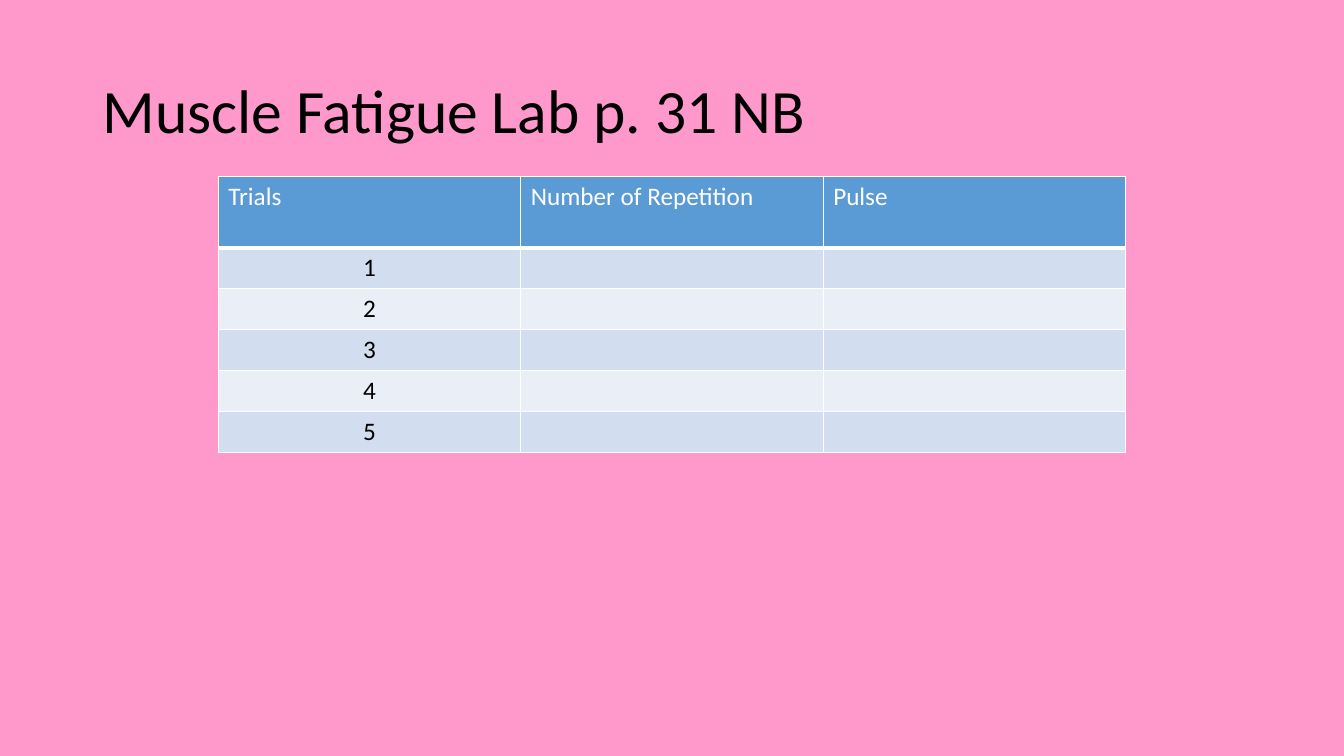
"""Build the muscle fatigue lab slide with its table of trials."""
from dataclasses import dataclass

from lxml.etree import SubElement
from pptx import Presentation
from pptx.dml.color import RGBColor
from pptx.enum.text import MSO_ANCHOR, MSO_AUTO_SIZE, PP_ALIGN
from pptx.oxml.ns import qn
from pptx.util import Pt


@dataclass(frozen=True)
class Theme:
    font: str = "Calibri"
    title_size: int = 44
    table_size: int = 18
    background: str = "FF99CC"
    ink: str = "000000"
    white: str = "FFFFFF"
    header: str = "5B9BD5"
    bands: tuple = ("D2DEEF", "EAEFF7")
    border: float = 1
    header_border: float = 3


class LabSlide:
    def __init__(self, deck, theme):
        self.theme = theme
        self.page = deck.slides.add_slide(deck.slide_layouts[5])
        self.paint(self.page.background.fill, theme.background)

    def paint(self, fill, color):
        fill.solid()
        fill.fore_color.rgb = RGBColor.from_string(color)

    def style_text(self, para, size, color, align):
        para.alignment = align
        for span in para.runs:
            span.font.name = self.theme.font
            span.font.size = Pt(size)
            span.font.bold = False
            span.font.color.rgb = RGBColor.from_string(color)

    def title(self, text, left, top, width, height):
        box = self.page.shapes.title
        box.left, box.top, box.width, box.height = Pt(left), Pt(top), Pt(width), Pt(height)
        frame = box.text_frame
        frame.text = text
        frame.word_wrap = True
        frame.auto_size = MSO_AUTO_SIZE.NONE
        frame.vertical_anchor = MSO_ANCHOR.MIDDLE
        para = frame.paragraphs[0]
        para.line_spacing = 0.9
        self.style_text(para, self.theme.title_size, self.theme.ink, PP_ALIGN.LEFT)

    def borders(self, cell, top, bottom):
        properties = cell._tc.get_or_add_tcPr()
        widths = {"L": self.theme.border, "R": self.theme.border, "T": top, "B": bottom}
        for side, width in widths.items():
            line = SubElement(properties, qn(f"a:ln{side}"), w=str(Pt(width)))
            fill = SubElement(line, qn("a:solidFill"))
            SubElement(fill, qn("a:srgbClr"), val=self.theme.white)

    def table(self, rows, left, top, column_width, header_height, row_height):
        theme = self.theme
        columns = len(rows[0])
        height = header_height + row_height * (len(rows) - 1)
        table = self.page.shapes.add_table(
            len(rows), columns, Pt(left), Pt(top), Pt(column_width * columns), Pt(height)
        ).table
        for column in table.columns:
            column.width = Pt(column_width)
        for index, values in enumerate(rows):
            is_header = index == 0
            table.rows[index].height = Pt(header_height if is_header else row_height)
            fill = theme.header if is_header else theme.bands[(index - 1) % 2]
            color = theme.white if is_header else theme.ink
            align = PP_ALIGN.LEFT if is_header else PP_ALIGN.CENTER
            upper = theme.header_border if index == 1 else theme.border
            lower = theme.header_border if is_header else theme.border
            for cell, value in zip(table.rows[index].cells, values):
                cell.text = value
                self.borders(cell, upper, lower)
                self.paint(cell.fill, fill)
                self.style_text(cell.text_frame.paragraphs[0], theme.table_size, color, align)


def main():
    deck = Presentation()
    deck.slide_width, deck.slide_height = Pt(960), Pt(540)
    slide = LabSlide(deck, Theme())
    slide.title("Muscle Fatigue Lab p. 31 NB", 66, 28.75, 828, 104.4)
    trials = [[str(number), "", ""] for number in range(1, 6)]
    slide.table([["Trials", "Number of Repetition", "Pulse"], *trials], 156, 126, 216, 51, 29.2)
    deck.save("out.pptx")


if __name__ == "__main__":
    main()
